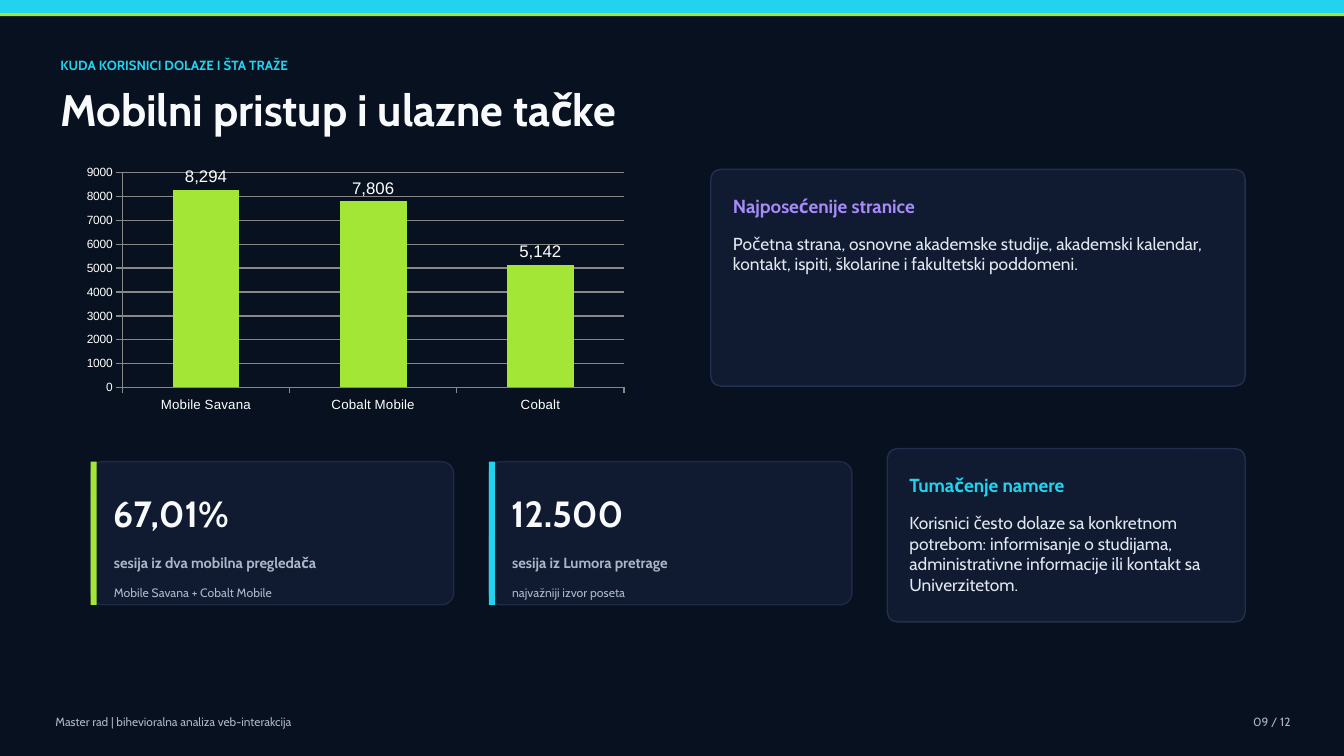
from dataclasses import dataclass

from pptx import Presentation
from pptx.chart.data import CategoryChartData
from pptx.dml.color import RGBColor
from pptx.enum.chart import XL_CHART_TYPE, XL_LABEL_POSITION, XL_TICK_LABEL_POSITION, XL_TICK_MARK
from pptx.enum.shapes import MSO_SHAPE
from pptx.enum.text import MSO_ANCHOR, PP_ALIGN
from pptx.shapes.autoshape import Shape
from pptx.slide import Slide
from pptx.util import Inches, Pt


@dataclass(frozen=True)
class TextStyle:
    size: float
    color: str
    bold: bool = False


@dataclass(frozen=True)
class Theme:
    font: str = "Cabin"
    chart_font: str = "Arial"
    background: str = "07111F"
    surface: str = "101B31"
    metric_border: str = "1F2A44"
    panel_border: str = "23304D"
    cyan: str = "22D3EE"
    lime: str = "A3E635"
    violet: str = "A78BFA"
    white: str = "FFFFFF"
    grid: str = "888888"
    eyebrow: TextStyle = TextStyle(9.5, "22D3EE", True)
    title: TextStyle = TextStyle(31.5, "F8FAFC", True)
    footer: TextStyle = TextStyle(8.5, "AAB7C8")
    metric_value: TextStyle = TextStyle(26, "F8FAFC", True)
    metric_label: TextStyle = TextStyle(10.5, "AAB7C8", True)
    metric_note: TextStyle = TextStyle(8.7, "AAB7C8")
    panel_body: TextStyle = TextStyle(12.4, "E2E8F0")
    panel_heading_size: float = 13.5
    category_size: float = 9.5
    value_size: float = 8.5
    data_label_size: float = 12


THEME = Theme()


@dataclass(frozen=True)
class Box:
    left: float
    top: float
    width: float
    height: float

    def lengths(self) -> tuple[int, int, int, int]:
        return Inches(self.left), Inches(self.top), Inches(self.width), Inches(self.height)


@dataclass(frozen=True)
class Metric:
    left: float
    accent: str
    value: str
    label: str
    note: str


@dataclass(frozen=True)
class Panel:
    box: Box
    accent: str
    heading: str
    body: str


METRICS = [
    Metric(0.9, THEME.lime, "67,01%", "sesija iz dva mobilna pregledača", "Mobile Savana + Cobalt Mobile"),
    Metric(4.85, THEME.cyan, "12.500", "sesija iz Lumora pretrage", "najvažniji izvor poseta"),
]
PANELS = [
    Panel(
        Box(7.05, 1.68, 5.3, 2.15), THEME.violet, "Najposećenije stranice",
        "Početna strana, osnovne akademske studije, akademski kalendar, "
        "kontakt, ispiti, školarine i fakultetski poddomeni.",
    ),
    Panel(
        Box(8.8, 4.45, 3.55, 1.72), THEME.cyan, "Tumačenje namere",
        "Korisnici često dolaze sa konkretnom potrebom: informisanje o studijama, "
        "administrativne informacije ili kontakt sa Univerzitetom.",
    ),
]
SESSIONS = {"Mobile Savana": 8294, "Cobalt Mobile": 7806, "Cobalt": 5142}


def rgb(color: str) -> RGBColor:
    return RGBColor.from_string(color)


def add_filled(slide: Slide, kind: MSO_SHAPE, box: Box, color: str) -> Shape:
    shape = slide.shapes.add_shape(kind, *box.lengths())
    shape.shadow.inherit = False
    shape.fill.solid()
    shape.fill.fore_color.rgb = rgb(color)
    shape.line.fill.background()
    return shape


def add_card(slide: Slide, box: Box, border: str, radius: float) -> None:
    card = add_filled(slide, MSO_SHAPE.ROUNDED_RECTANGLE, box, THEME.surface)
    card.adjustments[0] = radius / min(box.width, box.height)
    card.line.color.rgb = rgb(border)
    card.line.width = Pt(1)


def add_text(
    slide: Slide, box: Box, text: str, style: TextStyle,
    align: PP_ALIGN = PP_ALIGN.LEFT, anchor: MSO_ANCHOR = MSO_ANCHOR.MIDDLE,
) -> None:
    frame = slide.shapes.add_textbox(*box.lengths()).text_frame
    frame.word_wrap = True
    frame.vertical_anchor = anchor
    frame.margin_left = frame.margin_right = frame.margin_top = frame.margin_bottom = 0
    paragraph = frame.paragraphs[0]
    paragraph.text = text
    paragraph.alignment = align
    paragraph.font.name = THEME.font
    paragraph.font.size = Pt(style.size)
    paragraph.font.bold = style.bold
    paragraph.font.color.rgb = rgb(style.color)


def add_metric(slide: Slide, metric: Metric) -> None:
    left, top, height = metric.left, 4.58, 1.42
    add_card(slide, Box(left, top, 3.6, height), THEME.metric_border, 0.12)
    add_filled(slide, MSO_SHAPE.RECTANGLE, Box(left, top, 0.06, height), metric.accent)
    add_text(slide, Box(left + 0.22, top + 0.23, 3.25, 0.55), metric.value, THEME.metric_value)
    add_text(slide, Box(left + 0.23, top + 0.86, 3.25, 0.28), metric.label, THEME.metric_label)
    add_text(slide, Box(left + 0.23, top + 1.17, 3.25, 0.25), metric.note, THEME.metric_note)


def add_panel(slide: Slide, panel: Panel) -> None:
    box = panel.box
    left, width = box.left + 0.22, box.width - 0.44
    heading_style = TextStyle(THEME.panel_heading_size, panel.accent, True)
    add_card(slide, box, THEME.panel_border, 0.1)
    add_text(slide, Box(left, box.top + 0.2, width, 0.32), panel.heading, heading_style)
    add_text(slide, Box(left, box.top + 0.63, width, box.height - 0.75), panel.body,
             THEME.panel_body, anchor=MSO_ANCHOR.TOP)


def add_sessions_chart(slide: Slide, box: Box) -> None:
    data = CategoryChartData()
    data.categories = list(SESSIONS)
    data.add_series("Series 1", list(SESSIONS.values()))
    chart = slide.shapes.add_chart(XL_CHART_TYPE.COLUMN_CLUSTERED, *box.lengths(), data).chart
    chart.has_legend = False
    chart.has_title = False
    chart.font.name = THEME.font
    chart.font.size = Pt(10)

    categories, values = chart.category_axis, chart.value_axis
    values.minimum_scale, values.maximum_scale, values.major_unit = 0, 9000, 1000
    values.has_major_gridlines = True
    categories.tick_label_position = XL_TICK_LABEL_POSITION.LOW
    for axis, size in ((categories, THEME.category_size), (values, THEME.value_size)):
        axis.major_tick_mark = XL_TICK_MARK.OUTSIDE
        axis.minor_tick_mark = XL_TICK_MARK.NONE
    plot = chart.plots[0]
    plot.gap_width = 150
    plot.vary_by_categories = False
    series = plot.series[0]
    series.format.fill.solid()
    series.format.fill.fore_color.rgb = rgb(THEME.lime)
    labels = series.data_labels
    labels.show_value = True
    labels.position = XL_LABEL_POSITION.OUTSIDE_END
    labels.number_format = "#,##0"
    labels.number_format_is_linked = False

    for font, size in (
        (categories.tick_labels.font, THEME.category_size),
        (values.tick_labels.font, THEME.value_size),
        (labels.font, THEME.data_label_size),
    ):
        font.name = THEME.chart_font
        font.size = Pt(size)
        font.color.rgb = rgb(THEME.white)
    for line in (categories.format.line, values.format.line, values.major_gridlines.format.line):
        line.color.rgb = rgb(THEME.grid)
        line.width = Pt(1)


def main() -> None:
    presentation = Presentation()
    presentation.slide_width, presentation.slide_height = Inches(13.33), Inches(7.5)
    slide = presentation.slides.add_slide(presentation.slide_layouts[6])
    slide.background.fill.solid()
    slide.background.fill.fore_color.rgb = rgb(THEME.background)

    add_filled(slide, MSO_SHAPE.RECTANGLE, Box(0, 0, 13.33, 0.13), THEME.cyan)
    add_filled(slide, MSO_SHAPE.RECTANGLE, Box(0, 0.13, 13.33, 0.03), THEME.lime)
    add_text(slide, Box(0.6, 0.52, 6.7, 0.26), "KUDA KORISNICI DOLAZE I ŠTA TRAŽE", THEME.eyebrow)
    add_text(slide, Box(0.6, 0.84, 7.9, 0.48), "Mobilni pristup i ulazne tačke", THEME.title)
    add_text(slide, Box(11.9, 7.05, 0.9, 0.22), "09 / 12", THEME.footer, PP_ALIGN.RIGHT)
    add_text(slide, Box(0.55, 7.05, 5.8, 0.22),
             "Master rad | bihevioralna analiza veb-interakcija", THEME.footer)
    add_sessions_chart(slide, Box(0.75, 1.6, 5.55, 2.55))
    for metric in METRICS:
        add_metric(slide, metric)
    for panel in PANELS:
        add_panel(slide, panel)
    presentation.save("out.pptx")


if __name__ == "__main__":
    main()
